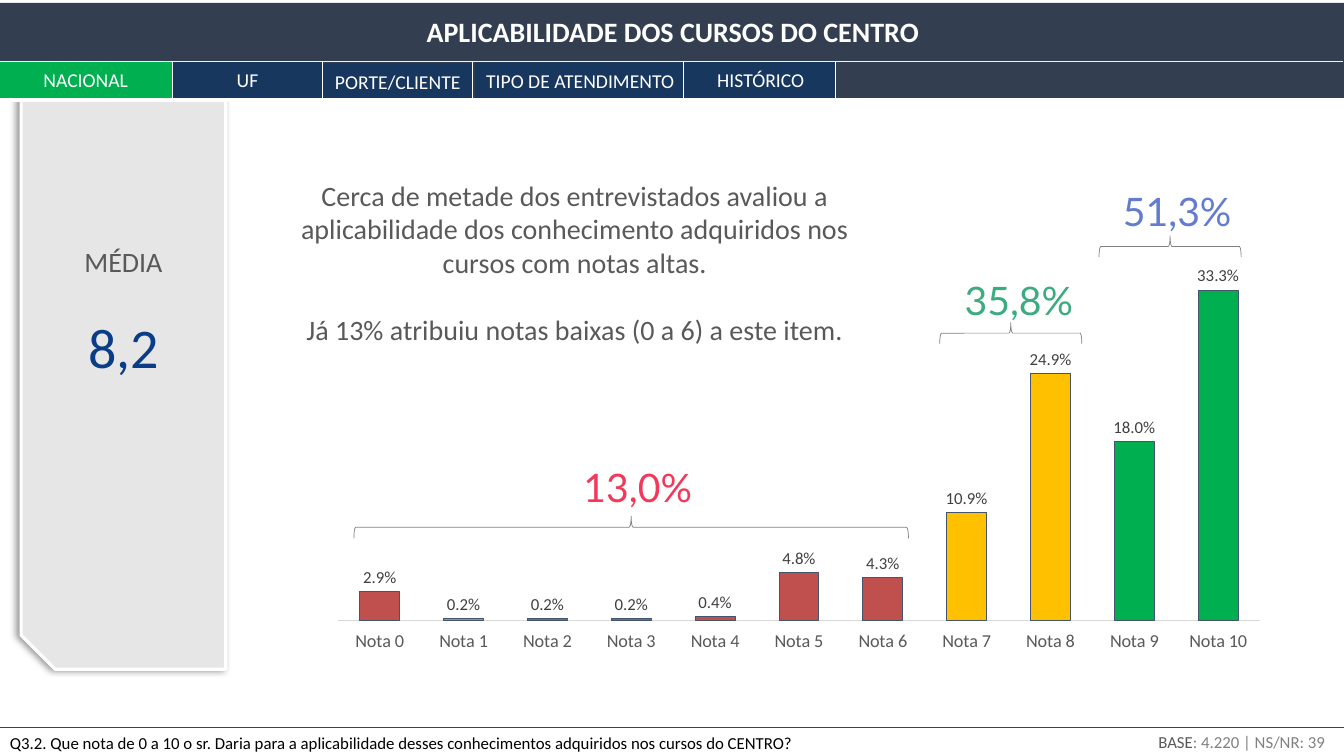
from lxml import etree
from pptx import Presentation
from pptx.chart.data import CategoryChartData
from pptx.dml.color import RGBColor
from pptx.enum.chart import XL_CHART_TYPE, XL_LABEL_POSITION, XL_TICK_LABEL_POSITION, XL_TICK_MARK
from pptx.enum.shapes import MSO_CONNECTOR, MSO_SHAPE
from pptx.enum.text import MSO_ANCHOR, MSO_AUTO_SIZE, PP_ALIGN
from pptx.oxml import parse_xml
from pptx.oxml.ns import nsdecls, qn
from pptx.util import Inches, Pt

CENTER, LEFT = PP_ALIGN.CENTER, PP_ALIGN.LEFT
TOP, MIDDLE = MSO_ANCHOR.TOP, MSO_ANCHOR.MIDDLE
RECTANGLE, BRACE, SNIPPED = MSO_SHAPE.RECTANGLE, MSO_SHAPE.LEFT_BRACE, MSO_SHAPE.SNIP_1_RECTANGLE

NAVY, GREEN, AMBER, RED = "17375E", "00B050", "FFC000", "C0504D"
WHITE, GRAY, DARK_GRAY = "FFFFFF", "808080", "595959"

TITLE = "APLICABILIDADE DOS CURSOS DO CENTRO"
QUESTION = ("Q3.2. Que nota de 0 a 10 o sr. Daria para a aplicabilidade desses "
            "conhecimentos adquiridos nos cursos do CENTRO?")
FINDINGS = [
    "Cerca de metade dos entrevistados avaliou a aplicabilidade dos conhecimento "
    "adquiridos nos cursos com notas altas.",
    "Já 13% atribuiu notas baixas (0 a 6) a este item.",
]
# label, left, top, width, fill
TABS = [
    ("NACIONAL", -0.01, 0.61, 1.72, GREEN),
    ("UF", 1.71, 0.61, 1.49, NAVY),
    ("PORTE/CLIENTE", 3.2, 0.63, 1.49, NAVY),
    ("TIPO DE ATENDIMENTO", 4.71, 0.62, 2.09, NAVY),
    ("HISTÓRICO", 6.8, 0.61, 1.49, NAVY),
]
TAB_HEIGHT = 0.37
SEPARATORS = [1.71, 3.2, 4.69, 6.78, 8.29]
SCORES = [0.029, 0.002, 0.002, 0.002, 0.004, 0.048, 0.043, 0.109, 0.249, 0.18, 0.333]
SCORE_COLORS = [RED, "ED7D31"] + [RED] * 5 + [AMBER] * 2 + [GREEN] * 2
# total, color, text box, visible brace box
GROUPS = [
    ("13,0%", "F2395A", (3.51, 4.55, 5.63, 0.57), (3.51, 5.12, 5.5, 0.22)),
    ("35,8%", "3BAB80", (9.4, 2.69, 1.41, 0.57), (9.32, 3.2, 1.41, 0.21)),
    ("51,3%", "637CCD", (10.9, 1.81, 1.55, 0.57), (10.9, 2.34, 1.41, 0.21)),
]


def color(hex_code):
    return RGBColor.from_string(hex_code)


def write(shape, paragraphs, align=CENTER, anchor=TOP, gap=0):
    """Fill a shape with paragraphs, each a list of (text, size, color, font, bold) runs."""
    frame = shape.text_frame
    frame.word_wrap = True
    frame.auto_size = MSO_AUTO_SIZE.NONE
    frame.vertical_anchor = anchor
    for index, runs in enumerate(paragraphs):
        paragraph = frame.add_paragraph() if index else frame.paragraphs[0]
        paragraph.alignment = align
        if index:
            paragraph.space_before = Pt(gap)
        for text, size, hex_code, font, bold in runs:
            run = paragraph.add_run()
            run.text = text
            run.font.size = Pt(size)
            run.font.name = font
            run.font.bold = bold
            run.font.color.rgb = color(hex_code)


def styled(text, size, hex_code, font="Calibri", bold=False):
    return text, size, hex_code, font, bold


def add_text(slide, box, paragraphs, **layout):
    shape = slide.shapes.add_textbox(*map(Inches, box))
    write(shape, paragraphs, **layout)


def add_shape(slide, kind, box, fill=None, line=None, width=0.5):
    shape = slide.shapes.add_shape(kind, *map(Inches, box))
    shape.shadow.inherit = False
    if fill:
        shape.fill.solid()
        shape.fill.fore_color.rgb = color(fill)
    else:
        shape.fill.background()
    if line:
        shape.line.color.rgb = color(line)
        shape.line.width = Pt(width)
    else:
        shape.line.fill.background()
    return shape


def add_line(slide, start, end, hex_code, width):
    line = slide.shapes.add_connector(MSO_CONNECTOR.STRAIGHT, *map(Inches, start + end))
    line.line.color.rgb = color(hex_code)
    line.line.width = Pt(width)
    etree.SubElement(line.element.spPr, qn("a:effectLst"))


def add_side_panel(slide):
    panel = add_shape(slide, SNIPPED, (0.21, 0.79, 2.03, 5.85), "E7E6E6", WHITE, 2.25)
    properties = panel.element.spPr
    frame = properties.find(qn("a:xfrm"))
    frame.set("flipH", "1")
    frame.set("flipV", "1")
    properties.find(qn("a:effectLst")).append(parse_xml(
        f'<a:outerShdw {nsdecls("a")} blurRad="63500" dist="38100" dir="10800000" rotWithShape="0">'
        '<a:srgbClr val="000000"><a:alpha val="40000"/></a:srgbClr></a:outerShdw>'))


def add_brace(slide, box):
    """Add a left brace turned to lie over the columns, covering the given box."""
    left, top, width, height = box
    shift = (width - height) / 2
    brace = add_shape(slide, BRACE, (left + shift, top - shift, height, width), line=GRAY)
    brace.rotation = 90


def set_font(font, size, hex_code):
    font.size = Pt(size)
    font.name = "Calibri"
    font.color.rgb = color(hex_code)


def add_score_chart(slide):
    data = CategoryChartData(number_format="0.0%")
    data.categories = [f"Nota {score}" for score in range(len(SCORES))]
    data.add_series("Series 1", SCORES)
    box = map(Inches, (3.2, 2.02, 9.45, 4.62))
    chart = slide.shapes.add_chart(XL_CHART_TYPE.COLUMN_CLUSTERED, *box, data).chart
    chart.has_legend = False
    chart.has_title = False
    set_font(chart.font, 10, "000000")

    chart.value_axis.visible = False
    chart.value_axis.has_major_gridlines = False
    chart.value_axis.minimum_scale = 0
    chart.value_axis.maximum_scale = 0.4
    axis = chart.category_axis
    axis.major_tick_mark = XL_TICK_MARK.NONE
    axis.tick_label_position = XL_TICK_LABEL_POSITION.LOW
    axis.format.line.color.rgb = color("D9D9D9")
    axis.format.line.width = Pt(0.75)
    set_font(axis.tick_labels.font, 13, DARK_GRAY)

    plot = chart.plots[0]
    plot.gap_width = 110
    plot.overlap = -27
    plot.vary_by_categories = False
    plot.has_data_labels = True
    labels = plot.data_labels
    labels.show_value = True
    labels.number_format = "0.0%"
    labels.number_format_is_linked = False
    labels.position = XL_LABEL_POSITION.OUTSIDE_END
    set_font(labels.font, 12, "404040")
    for index, fill in enumerate(SCORE_COLORS):
        column = plot.series[0].points[index].format
        column.fill.solid()
        column.fill.fore_color.rgb = color(fill)
        column.line.color.rgb = color("44546A")
        column.line.width = Pt(0.75)

    plot_area = chart.element.find(".//" + qn("c:plotArea"))
    for old_layout in plot_area.findall(qn("c:layout")):
        plot_area.remove(old_layout)
    plot_area.insert(0, parse_xml(
        f'<c:layout {nsdecls("c")}><c:manualLayout><c:layoutTarget val="inner"/>'
        '<c:xMode val="edge"/><c:yMode val="edge"/><c:x val="0.016"/><c:y val="0.043"/>'
        '<c:w val="0.968"/><c:h val="0.852"/></c:manualLayout></c:layout>'))


def main():
    presentation = Presentation()
    presentation.slide_width, presentation.slide_height = Inches(13.33), Inches(7.5)
    slide = presentation.slides.add_slide(presentation.slide_layouts[5])

    add_side_panel(slide)
    add_shape(slide, RECTANGLE, (0, 0.03, 13.34, 0.97), "333F50")
    title = slide.shapes.title
    title.left, title.top, title.width, title.height = map(Inches, (0.01, 0.09, 13.33, 0.44))
    write(title, [[styled(TITLE, 20, WHITE, bold=True)]])
    title.element.getparent().append(title.element)  # bring in front of the header band

    add_line(slide, (0, 7.22), (13.33, 7.22), "404040", 0.5)
    add_text(slide, (0, 7.22, 11.39, 0.3), [[styled(QUESTION, 12, "000000")]], align=LEFT)
    add_text(slide, (11.39, 7.21, 1.94, 0.3),
             [[styled("BASE", 12, DARK_GRAY), styled(": 4.220 | NS/NR: 39", 12, GRAY)]], align=LEFT)
    add_text(slide, (2.57, 1.72, 6.26, 1.78),
             [[styled(text, 20, DARK_GRAY)] for text in FINDINGS], gap=24)
    add_text(slide, (0.21, 2.38, 2.03, 1.45),
             [[styled("MÉDIA", 20, DARK_GRAY)], [styled("8,2", 40, "093D88")]], gap=24)

    add_score_chart(slide)
    for total, hex_code, text_box, brace_box in GROUPS:
        add_text(slide, text_box, [[styled(total, 28, hex_code, "Lato")]])
        add_brace(slide, brace_box)

    for label, left, top, width, fill in TABS:
        tab = add_shape(slide, RECTANGLE, (left, top, width, TAB_HEIGHT), fill)
        write(tab, [[styled(label, 14, WHITE)]], anchor=MIDDLE)
    for x in SEPARATORS:
        add_line(slide, (x, 0.99), (x, 0.62), WHITE, 0.5)
    add_line(slide, (-0.02, 0.61), (13.32, 0.61), "F2F2F2", 1)
    add_line(slide, (-0.03, 0.99), (13.34, 0.99), WHITE, 3)

    presentation.save("out.pptx")


if __name__ == "__main__":
    main()
